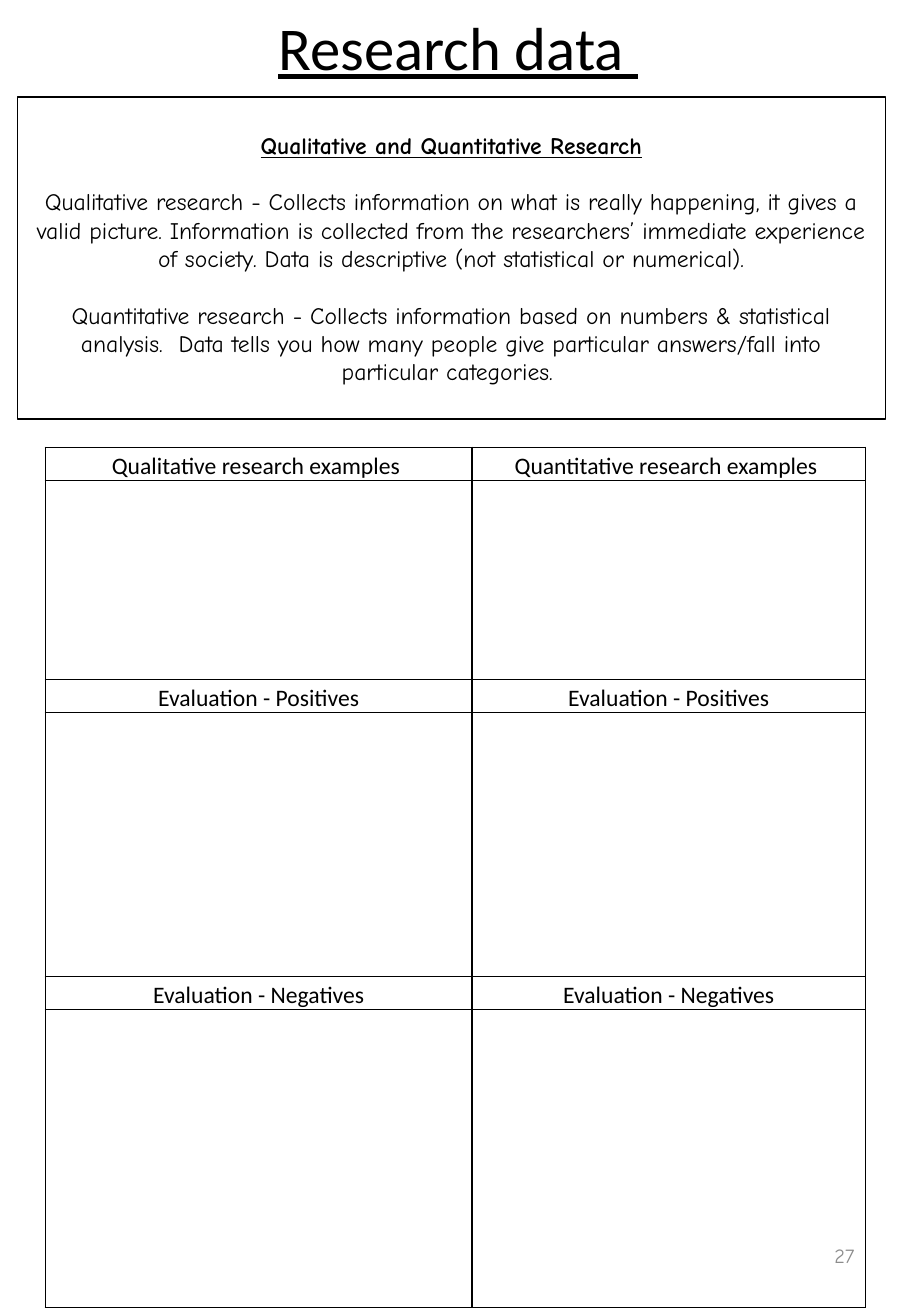
from lxml import etree
from pptx import Presentation
from pptx.dml.color import RGBColor
from pptx.enum.shapes import MSO_SHAPE
from pptx.enum.text import MSO_ANCHOR, MSO_AUTO_SIZE, PP_ALIGN
from pptx.oxml.ns import qn
from pptx.util import Cm, Pt

RECTANGLE = MSO_SHAPE.RECTANGLE
MIDDLE = MSO_ANCHOR.MIDDLE
NO_AUTOFIT = MSO_AUTO_SIZE.NONE
CENTER, RIGHT = PP_ALIGN.CENTER, PP_ALIGN.RIGHT
BLACK, WHITE, GREY = "000000", "FFFFFF", "8C8C8C"
BODY_FONT, HEADING_FONT = "Comic Neue", "Calibri"

DEFINITIONS = [
    "Qualitative research - Collects information on what is really happening, it gives a valid "
    "picture. Information is collected from the researchers’ immediate experience of society. "
    "Data is descriptive (not statistical or numerical).",
    "Quantitative research - Collects information based on numbers & statistical analysis.  "
    "Data tells you how many people give particular answers/fall into particular categories. ",
]
SECTIONS = [
    (("Qualitative research examples ", "Quantitative research examples "), 4.16),
    (("Evaluation - Positives", "Evaluation - Positives"), 5.52),
    (("Evaluation - Negatives", "Evaluation - Negatives"), 6.23),
]
HEADER_HEIGHT = 0.69
COLUMN_WIDTHS = [8.92, 8.23]


def color(value):
    """Turn a hex string into a colour."""
    return RGBColor.from_string(value)


def write(paragraph, text, font=BODY_FONT, size=14, fill=BLACK, bold=False,
          underline=False, align=CENTER, before=0, spacing=1.0):
    """Put formatted text into a paragraph."""
    paragraph.alignment = align
    paragraph.space_before = Pt(before)
    paragraph.line_spacing = spacing
    run = paragraph.add_run()
    run.text = text
    run.font.name = font
    run.font.size = Pt(size)
    run.font.color.rgb = color(fill)
    run.font.bold = bold
    run.font.underline = underline


def prepare_frame(shape):
    """Wrap and vertically centre a shape's text."""
    frame = shape.text_frame
    frame.word_wrap = True
    frame.auto_size = NO_AUTOFIT
    frame.vertical_anchor = MIDDLE
    return frame


def add_title(slide, text):
    """Place and fill the title."""
    title = slide.shapes.title
    title.left, title.top, title.width, title.height = Cm(0.08), Cm(-0.1), Cm(19), Cm(2.13)
    write(prepare_frame(title).paragraphs[0], text, font=HEADING_FONT, size=36, underline=True)


def add_page_number(slide, number):
    """Add the page number at the lower right."""
    box = slide.shapes.add_textbox(Cm(13.67), Cm(25.5), Cm(4.45), Cm(1.47))
    write(prepare_frame(box).paragraphs[0], number, size=12, fill=GREY, align=RIGHT)


def add_definitions(slide, heading, definitions):
    """Add the outlined box with the two definitions."""
    box = slide.shapes.add_shape(RECTANGLE, Cm(0.36), Cm(2.03), Cm(18.16), Cm(6.73))
    box.shadow.inherit = False
    box.fill.solid()
    box.fill.fore_color.rgb = color(WHITE)
    box.line.color.rgb = color(BLACK)
    box.line.width = Pt(0.75)
    frame = prepare_frame(box)
    write(frame.paragraphs[0], heading, bold=True, underline=True)
    for definition in definitions:
        write(frame.add_paragraph(), definition, before=16.8)


def add_borders(cell):
    """Draw a thin black line on every side of a cell."""
    properties = cell._tc.get_or_add_tcPr()
    for index, side in enumerate(("a:lnL", "a:lnR", "a:lnT", "a:lnB")):
        line = etree.Element(qn(side), w=str(Pt(1)))
        fill = etree.SubElement(line, qn("a:solidFill"))
        etree.SubElement(fill, qn("a:srgbClr"), val=BLACK)
        properties.insert(index, line)


def add_worksheet(slide, sections):
    """Add the table of headed answer spaces."""
    frame = slide.shapes.add_table(len(sections) * 2, len(COLUMN_WIDTHS), Cm(0.95), Cm(9.35),
                                   Cm(sum(COLUMN_WIDTHS)), Cm(17.98))
    table = frame.table
    table.first_row = table.horz_banding = False
    for column, width in zip(table.columns, COLUMN_WIDTHS):
        column.width = Cm(width)
    for cell in table.iter_cells():
        cell.fill.background()
        cell.margin_left = cell.margin_right = Cm(0.18)
        cell.margin_top = cell.margin_bottom = 0
        add_borders(cell)
    for index, (headings, space) in enumerate(sections):
        table.rows[index * 2].height = Cm(HEADER_HEIGHT)
        table.rows[index * 2 + 1].height = Cm(space)
        for column, heading in enumerate(headings):
            paragraph = table.cell(index * 2, column).text_frame.paragraphs[0]
            write(paragraph, heading, font=HEADING_FONT, spacing=1.15)


def main():
    """Build and save the slide."""
    presentation = Presentation()
    presentation.slide_width, presentation.slide_height = Cm(19.05), Cm(27.51)
    slide = presentation.slides.add_slide(presentation.slide_layouts[5])
    add_page_number(slide, "27")
    add_title(slide, "Research data ")
    add_definitions(slide, "Qualitative and Quantitative Research", DEFINITIONS)
    add_worksheet(slide, SECTIONS)
    presentation.save("out.pptx")


if __name__ == "__main__":
    main()
